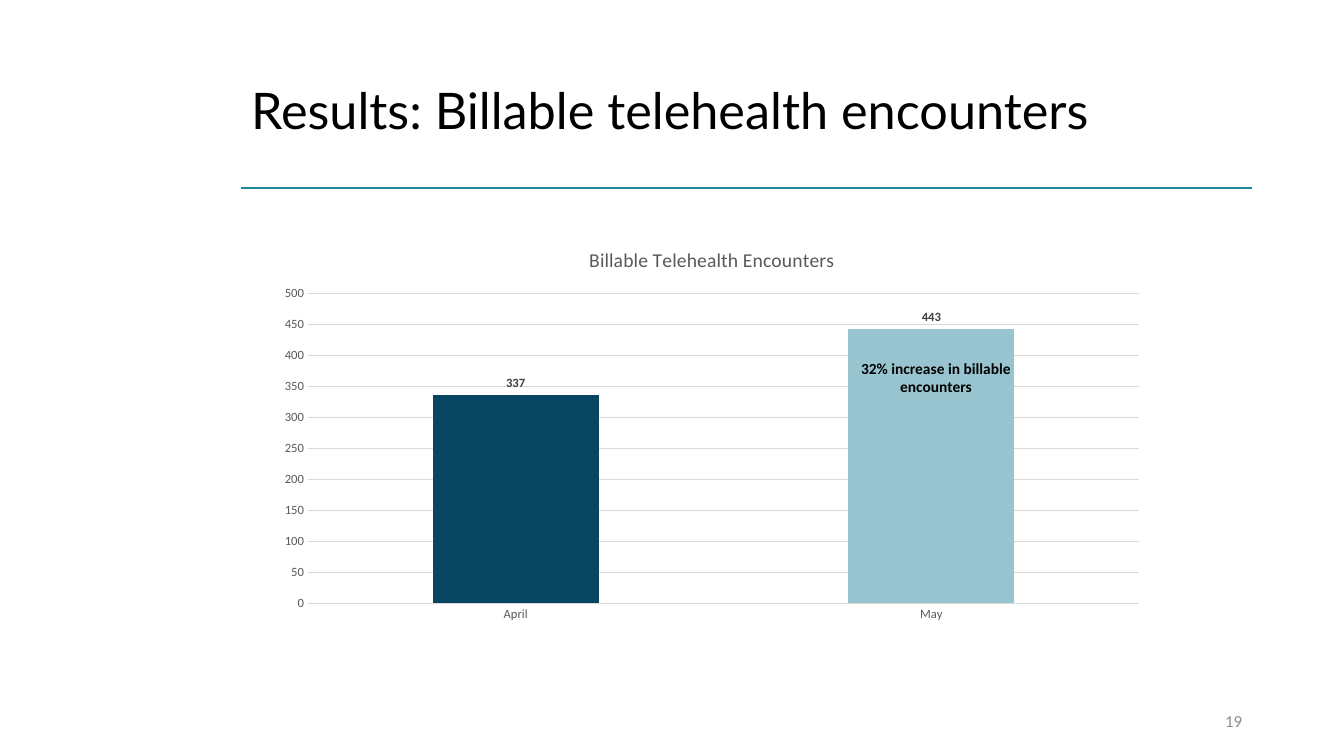
from lxml import etree
from pptx import Presentation
from pptx.chart.data import CategoryChartData
from pptx.dml.color import RGBColor
from pptx.enum.chart import XL_CHART_TYPE, XL_LABEL_POSITION, XL_TICK_MARK
from pptx.enum.shapes import MSO_CONNECTOR
from pptx.enum.text import MSO_ANCHOR, MSO_AUTO_SIZE, PP_ALIGN
from pptx.oxml.ns import qn
from pptx.util import Pt

COLUMNS = XL_CHART_TYPE.COLUMN_CLUSTERED
OUTSIDE_END = XL_LABEL_POSITION.OUTSIDE_END
NO_TICK = XL_TICK_MARK.NONE
STRAIGHT = MSO_CONNECTOR.STRAIGHT
TOP, MIDDLE = MSO_ANCHOR.TOP, MSO_ANCHOR.MIDDLE
NO_AUTOFIT = MSO_AUTO_SIZE.NONE
LEFT, CENTER, RIGHT = PP_ALIGN.LEFT, PP_ALIGN.CENTER, PP_ALIGN.RIGHT

EMU_PER_PX = 914400 / 100.8
BODY_FONT, TITLE_FONT = "Calibri", "Lato"
BLACK, TEAL, GRID, AXIS_TEXT = "000000", "1A8A99", "D9D9D9", "595959"
ENCOUNTERS = {"April": (337, "084561"), "May": (443, "98C4D0")}


def px(length):
    return round(length * EMU_PER_PX)


def place(box):
    return [px(length) for length in box]


def rgb(code):
    return RGBColor.from_string(code)


def style_font(font, size, color, bold=False, name=BODY_FONT):
    font.name, font.size, font.bold = name, Pt(size), bold
    font.color.rgb = rgb(color)


def style_line(line, color, width):
    line.color.rgb = rgb(color)
    line.width = Pt(width)


def add_text(slide, box, text, size, color, align, anchor, bold=False):
    frame = slide.shapes.add_textbox(*place(box)).text_frame
    frame.word_wrap = True
    frame.vertical_anchor = anchor
    paragraph = frame.paragraphs[0]
    paragraph.text = text
    paragraph.alignment = align
    style_font(paragraph.font, size, color, bold)


def add_heading(slide, box):
    left, top, width, height = box
    # Title
    title = slide.shapes.title
    title.left, title.top, title.width, title.height = place(box)
    frame = title.text_frame
    frame.text = "Results: Billable telehealth encounters"
    frame.word_wrap = True
    frame.auto_size = NO_AUTOFIT
    frame.vertical_anchor = MIDDLE
    paragraph = frame.paragraphs[0]
    paragraph.alignment = LEFT
    paragraph.line_spacing = 0.9
    style_font(paragraph.font, 36, BLACK, name=TITLE_FONT)
    # Rule under the title
    rule_y = top + height + 2
    rule = slide.shapes.add_connector(
        STRAIGHT, *place((left, rule_y, left + 1011, rule_y)))
    style_line(rule.line, TEAL, 1.75)
    etree.SubElement(rule._element.spPr, qn("a:effectLst"))


def add_encounter_chart(slide, box):
    left, top, _, _ = box
    data = CategoryChartData()
    data.categories = list(ENCOUNTERS)
    data.add_series("Series 1", [count for count, _ in ENCOUNTERS.values()])
    chart = slide.shapes.add_chart(COLUMNS, *place(box), data).chart
    style_font(chart.font, 10, BLACK)
    chart.has_legend = False

    # Chart title
    chart.has_title = True
    chart.chart_title.include_in_layout = False
    heading = chart.chart_title.text_frame.paragraphs[0]
    heading.text = "Billable Telehealth Encounters"
    style_font(heading.font, 14, AXIS_TEXT)

    # Axes
    months, counts = chart.category_axis, chart.value_axis
    for axis in (months, counts):
        axis.major_tick_mark = axis.minor_tick_mark = NO_TICK
        style_font(axis.tick_labels.font, 9, AXIS_TEXT)
    style_line(months.format.line, GRID, 0.75)
    counts.minimum_scale, counts.maximum_scale = 0, 500
    counts.major_unit = 50
    counts.format.line.fill.background()
    style_line(counts.major_gridlines.format.line, GRID, 0.75)

    # Columns and their labels
    plot = chart.plots[0]
    plot.gap_width = 150
    plot.vary_by_categories = False
    series = plot.series[0]
    for index, (_, color) in enumerate(ENCOUNTERS.values()):
        fill = series.points[index].format.fill
        fill.solid()
        fill.fore_color.rgb = rgb(color)
    labels = series.data_labels
    labels.show_value = True
    labels.position = OUTSIDE_END
    style_font(labels.font, 9, "404040", bold=True)

    # Remark on the May column
    add_text(slide, (left + 568, top + 125, 202, 47),
             "32% increase in billable encounters", 11, BLACK, CENTER, TOP,
             bold=True)


def add_page_number(slide, box):
    add_text(slide, box, "19", 12, "8C8C8C", RIGHT, MIDDLE)


def main():
    deck = Presentation()
    deck.slide_width, deck.slide_height = px(1344), px(756)
    slide = deck.slides.add_slide(deck.slide_layouts[5])
    add_heading(slide, (241, 40, 1061, 146))
    add_encounter_chart(slide, (267, 229, 890, 401))
    add_page_number(slide, (950, 701, 302, 40))
    deck.save("out.pptx")


if __name__ == "__main__":
    main()
